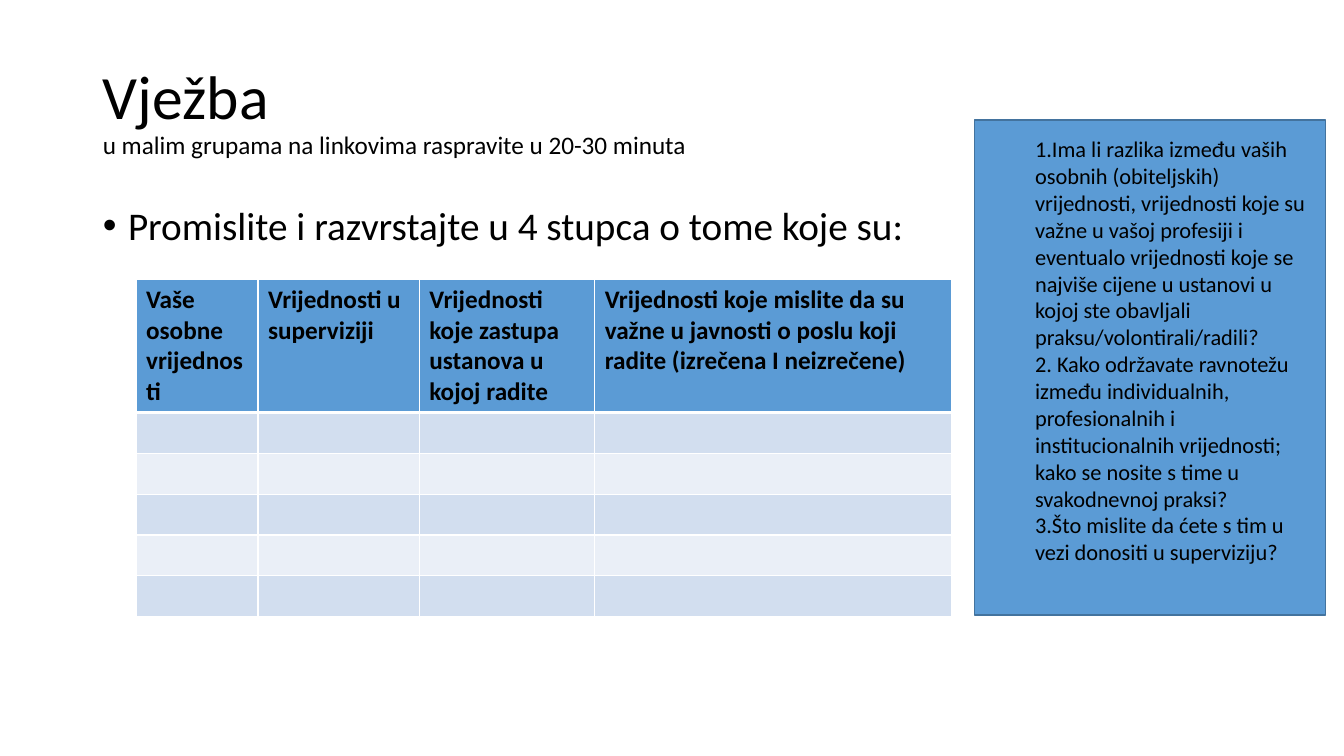
from dataclasses import dataclass

from lxml import etree
from pptx import Presentation
from pptx.dml.color import RGBColor
from pptx.enum import shapes, text
from pptx.oxml.ns import qn
from pptx.util import Pt


@dataclass(frozen=True)
class Theme:
    font: str = "Calibri"
    ink: str = "000000"
    paper: str = "FFFFFF"
    accent: str = "5B9BD5"
    accent_edge: str = "43739E"
    bands: tuple[str, str] = ("D2DEEF", "EAEFF7")
    title: float = 44
    subtitle: float = 18
    body: float = 28
    table: float = 18
    box: float = 16


@dataclass(frozen=True)
class Area:
    left: float
    top: float
    width: float
    height: float

    def points(self) -> tuple:
        return Pt(self.left), Pt(self.top), Pt(self.width), Pt(self.height)


@dataclass(frozen=True)
class Column:
    heading: str
    width: float


THEME = Theme()
TITLE_AREA = Area(66.24, 28.8, 828, 104.4)
BODY_AREA = Area(66.24, 144, 828, 342.72)
BOX_AREA = Area(696.24, 85.68, 250.56, 353.52)
TABLE_LEFT, TABLE_TOP = 97.2, 199.44
HEADER_HEIGHT, ROW_HEIGHT, EMPTY_ROWS = 95, 29.2, 5

COLUMNS = [
    Column("Vaše osobne vrijednosti", 87.12),
    Column("Vrijednosti u superviziji", 115.2),
    Column("Vrijednosti koje zastupa ustanova u kojoj radite", 125.28),
    Column("Vrijednosti koje mislite da su važne u javnosti o poslu koji radite "
           "(izrečena I neizrečene)", 254.88),
]
QUESTIONS = [
    "1.Ima li razlika između vaših osobnih (obiteljskih) vrijednosti, vrijednosti "
    "koje su važne u vašoj profesiji i eventualo vrijednosti koje se najviše cijene "
    "u ustanovi u kojoj ste obavljali praksu/volontirali/radili?",
    "2. Kako održavate ravnotežu između individualnih, profesionalnih i "
    "institucionalnih vrijednosti; kako se nosite s time u svakodnevnoj praksi?",
    "3.Što mislite da ćete s tim u vezi donositi u superviziju?",
]


def rgb(colour: str) -> RGBColor:
    return RGBColor.from_string(colour)


def set_font(p, size: float, bold: bool = False) -> None:
    p.font.name, p.font.size, p.font.bold = THEME.font, Pt(size), bold
    p.font.color.rgb = rgb(THEME.ink)


def set_indent(p, margin: float, first: float) -> None:
    pPr = p._p.get_or_add_pPr()
    pPr.set("marL", str(Pt(margin)))
    pPr.set("indent", str(Pt(first)))


def place(sp, area: Area, anchor):
    sp.left, sp.top, sp.width, sp.height = area.points()
    tf = sp.text_frame
    tf.auto_size = text.MSO_AUTO_SIZE.NONE
    tf.word_wrap = True
    tf.vertical_anchor = anchor
    return tf


def fill_title(sp) -> None:
    p = place(sp, TITLE_AREA, text.MSO_ANCHOR.MIDDLE).paragraphs[0]
    p.alignment, p.line_spacing = text.PP_ALIGN.LEFT, 0.9
    set_font(p, THEME.title)
    p.add_run().text = "Vježba"
    p.add_line_break()
    r = p.add_run()
    r.text = "u malim grupama na linkovima raspravite u 20-30 minuta"
    r.font.size = Pt(THEME.subtitle)


def fill_body(sp) -> None:
    p = place(sp, BODY_AREA, text.MSO_ANCHOR.TOP).paragraphs[0]
    p.text = "Promislite i razvrstajte u 4 stupca o tome koje su:"
    p.line_spacing, p.space_before = 0.9, Pt(10)
    set_font(p, THEME.body)
    set_indent(p, 18, -18)


def set_borders(cell, bottom: float) -> None:
    """Draw side and top borders 1 point wide, and the bottom one as given."""
    tcPr = cell._tc.get_or_add_tcPr()
    for side, width in zip("LRTB", (1, 1, 1, bottom)):
        ln = etree.SubElement(tcPr, qn(f"a:ln{side}"), w=str(Pt(width)))
        fill = etree.SubElement(ln, qn("a:solidFill"))
        etree.SubElement(fill, qn("a:srgbClr"), val=THEME.paper)


def add_values_table(slide) -> None:
    area = Area(TABLE_LEFT, TABLE_TOP, sum(c.width for c in COLUMNS),
                HEADER_HEIGHT + EMPTY_ROWS * ROW_HEIGHT)
    table = slide.shapes.add_table(EMPTY_ROWS + 1, len(COLUMNS), *area.points()).table
    for column, grid_column in zip(COLUMNS, table.columns):
        grid_column.width = Pt(column.width)
    for i, row in enumerate(table.rows):
        header = i == 0
        row.height = Pt(HEADER_HEIGHT if header else ROW_HEIGHT)
        for column, cell in zip(COLUMNS, row.cells):
            set_borders(cell, 3 if header else 1)
            cell.fill.solid()
            cell.fill.fore_color.rgb = rgb(THEME.accent if header else THEME.bands[(i - 1) % 2])
            p = cell.text_frame.paragraphs[0]
            if header:
                p.text = column.heading
            set_font(p, THEME.table, bold=header)


def add_question_box(slide) -> None:
    sp = slide.shapes.add_shape(shapes.MSO_SHAPE.RECTANGLE, *BOX_AREA.points())
    sp.shadow.inherit = False
    sp.fill.solid()
    sp.fill.fore_color.rgb = rgb(THEME.accent)
    sp.line.color.rgb = rgb(THEME.accent_edge)
    sp.line.width = Pt(1)
    tf = place(sp, BOX_AREA, text.MSO_ANCHOR.MIDDLE)
    tf.margin_bottom = Pt(28)
    for i, question in enumerate(QUESTIONS):
        p = tf.add_paragraph() if i else tf.paragraphs[0]
        p.text, p.level, p.alignment = question, 1, text.PP_ALIGN.LEFT
        set_font(p, THEME.box)
        set_indent(p, 36, 0)


def main() -> None:
    prs = Presentation()
    prs.slide_width, prs.slide_height = Pt(960), Pt(540)
    slide = prs.slides.add_slide(prs.slide_layouts[1])
    fill_title(slide.shapes.title)
    fill_body(slide.placeholders[1])
    add_values_table(slide)
    add_question_box(slide)
    prs.save("out.pptx")


if __name__ == "__main__":
    main()
